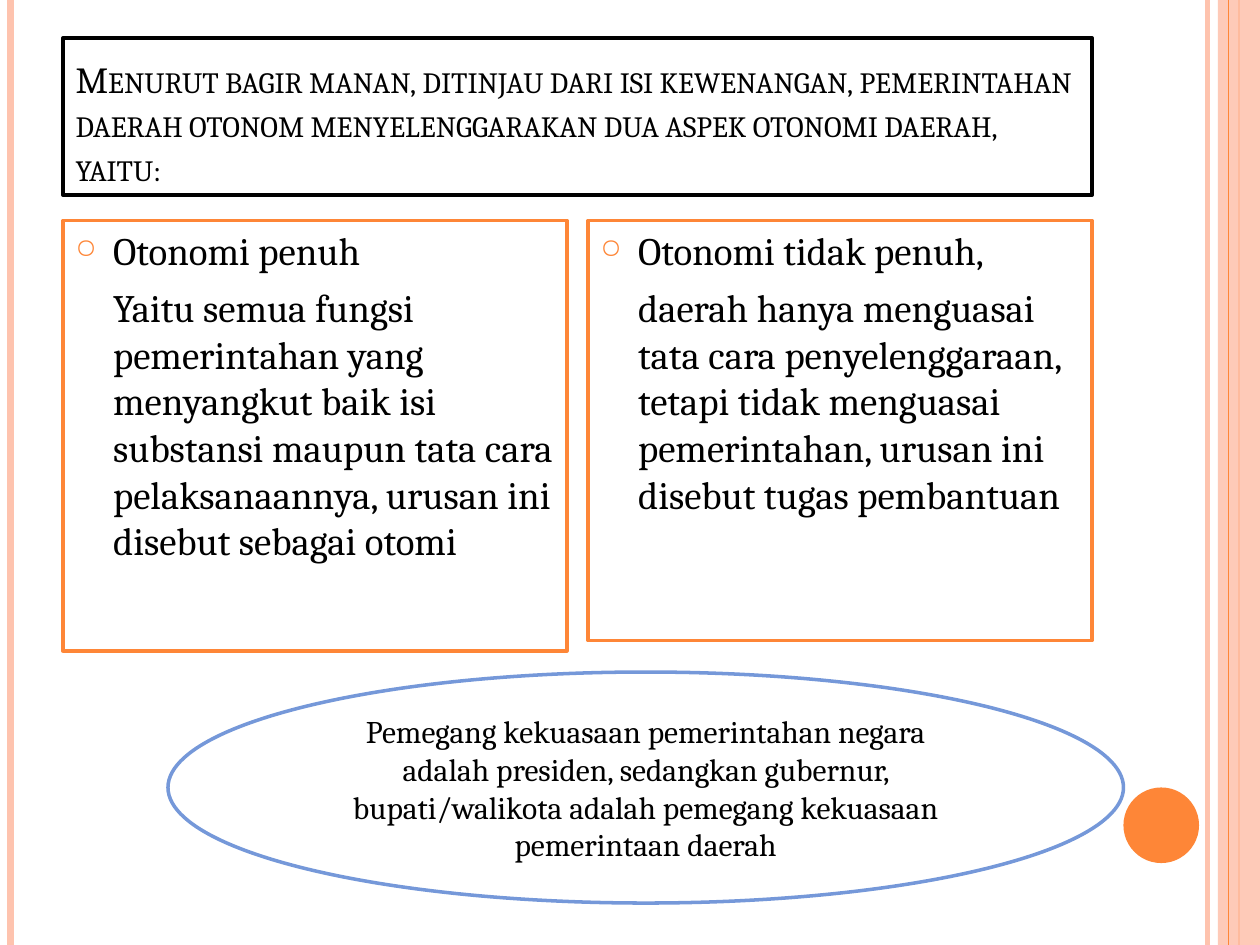
import pptx
import pptx.dml.color
import pptx.enum.shapes
import pptx.enum.text
import pptx.oxml.ns
import pptx.util
import lxml.etree

RGBColor = pptx.dml.color.RGBColor
PEACH = RGBColor(0xFE, 0xC3, 0xAE)
ORANGE = RGBColor(0xFE, 0x86, 0x37)
BLUE = RGBColor(0x75, 0x98, 0xD9)
BLACK = RGBColor(0, 0, 0)
WHITE = RGBColor(0xFF, 0xFF, 0xFF)
MSO_SHAPE = pptx.enum.shapes.MSO_SHAPE
PP_ALIGN = pptx.enum.text.PP_ALIGN
MSO_ANCHOR = pptx.enum.text.MSO_ANCHOR
qn = pptx.oxml.ns.qn
COLUMNS, ROWS = 120, 90

presentation = pptx.Presentation()
presentation.slide_width = pptx.util.Inches(10)
presentation.slide_height = pptx.util.Inches(7.5)
column = presentation.slide_width / COLUMNS
row = presentation.slide_height / ROWS
slide = presentation.slides.add_slide(presentation.slide_layouts[5])


def add_panel(kind, left, top, width, height, fill, line=None):
    shape = slide.shapes.add_shape(kind, int(left * column), int(top * row),
                                   int(width * column), int(height * row))
    shape.shadow.inherit = False
    shape.fill.solid()
    shape.fill.fore_color.rgb = fill
    if line is None:
        shape.line.fill.background()
    else:
        shape.line.color.rgb = line
        shape.line.width = pptx.util.Pt(2)
    return shape


def write_text(shape, paragraphs, size, align=PP_ALIGN.LEFT, anchor=MSO_ANCHOR.TOP,
               space_before=0, indent=0, bullet=None, small_caps=False):
    frame = shape.text_frame
    frame.word_wrap = True
    frame.auto_size = pptx.enum.text.MSO_AUTO_SIZE.NONE
    frame.vertical_anchor = anchor
    for number, text in enumerate(paragraphs):
        paragraph = frame.add_paragraph() if number else frame.paragraphs[0]
        paragraph.alignment = align
        paragraph.space_before = pptx.util.Pt(space_before)
        run = paragraph.add_run()
        run.text = text
        run.font.name = "Cambria"
        run.font.size = pptx.util.Pt(size)
        run.font.color.rgb = BLACK
        if small_caps:
            run._r.get_or_add_rPr().set("cap", "small")
        properties = paragraph._p.get_or_add_pPr()
        if indent:
            properties.set("marL", str(int(indent * column)))
        if bullet and number == 0:
            properties.set("indent", str(-int(indent * column)))
            colour = lxml.etree.SubElement(properties, qn("a:buClr"))
            lxml.etree.SubElement(colour, qn("a:srgbClr"), val=str(ORANGE))
            lxml.etree.SubElement(properties, qn("a:buSzPct"), val="70000")
            lxml.etree.SubElement(properties, qn("a:buChar"), char=bullet)


for position, colour, width in [(115, PEACH, 3), (1, PEACH, 4.5), (118, ORANGE, 1.5)]:
    rule = slide.shapes.add_connector(pptx.enum.shapes.MSO_CONNECTOR.STRAIGHT,
                                      int(position * column), 0,
                                      int(position * column), presentation.slide_height)
    rule.line.color.rgb = colour
    rule.line.width = pptx.util.Pt(width)
    lxml.etree.SubElement(rule._element.spPr, qn("a:effectLst"))

side_band = add_panel(MSO_SHAPE.RECTANGLE, 116, 0, 4, ROWS, PEACH)
band_colour = side_band._element.spPr.find(".//" + qn("a:srgbClr"))
lxml.etree.SubElement(band_colour, qn("a:alpha"), val="87000")

band_rule = slide.shapes.add_connector(pptx.enum.shapes.MSO_CONNECTOR.STRAIGHT,
                                       int(117 * column), 0,
                                       int(117 * column), presentation.slide_height)
band_rule.line.color.rgb = ORANGE
band_rule.line.width = pptx.util.Pt(0.75)
lxml.etree.SubElement(band_rule._element.spPr, qn("a:effectLst"))

add_panel(MSO_SHAPE.OVAL, 107, 75, 7.2, 7.2, ORANGE)

title = slide.shapes.title
title.left, title.top = int(6 * column), int(3.6 * row)
title.width, title.height = int(98 * column), int(15 * row)
title.fill.solid()
title.fill.fore_color.rgb = WHITE
title.line.color.rgb = BLACK
title.line.width = pptx.util.Pt(2)
write_text(title, ["Menurut bagir manan, ditinjau dari isi kewenangan, pemerintahan daerah "
                   "otonom menyelenggarakan dua aspek otonomi daerah, yaitu:"],
           size=21, anchor=MSO_ANCHOR.BOTTOM, small_caps=True)

aspects = [
    (6, 41, ["Otonomi penuh",
             "Yaitu semua fungsi pemerintahan yang menyangkut baik isi substansi maupun "
             "tata cara pelaksanaannya, urusan ini disebut sebagai otomi"]),
    (56, 40, ["Otonomi tidak penuh,",
              "daerah hanya menguasai tata cara penyelenggaraan, tetapi tidak menguasai "
              "pemerintahan, urusan ini disebut tugas pembantuan"]),
]
for left, height, paragraphs in aspects:
    aspect = add_panel(MSO_SHAPE.RECTANGLE, left, 21, 48, height, WHITE, ORANGE)
    write_text(aspect, paragraphs, size=22.2, space_before=6, indent=3.6, bullet="○")

conclusion = add_panel(MSO_SHAPE.OVAL, 16, 64, 91, 22, WHITE, BLUE)
write_text(conclusion, ["Pemegang kekuasaan pemerintahan negara adalah presiden, sedangkan gubernur, "
                        "bupati/walikota adalah pemegang kekuasaan pemerintaan daerah"],
           size=18, align=PP_ALIGN.CENTER, anchor=MSO_ANCHOR.MIDDLE)

presentation.save("out.pptx")
